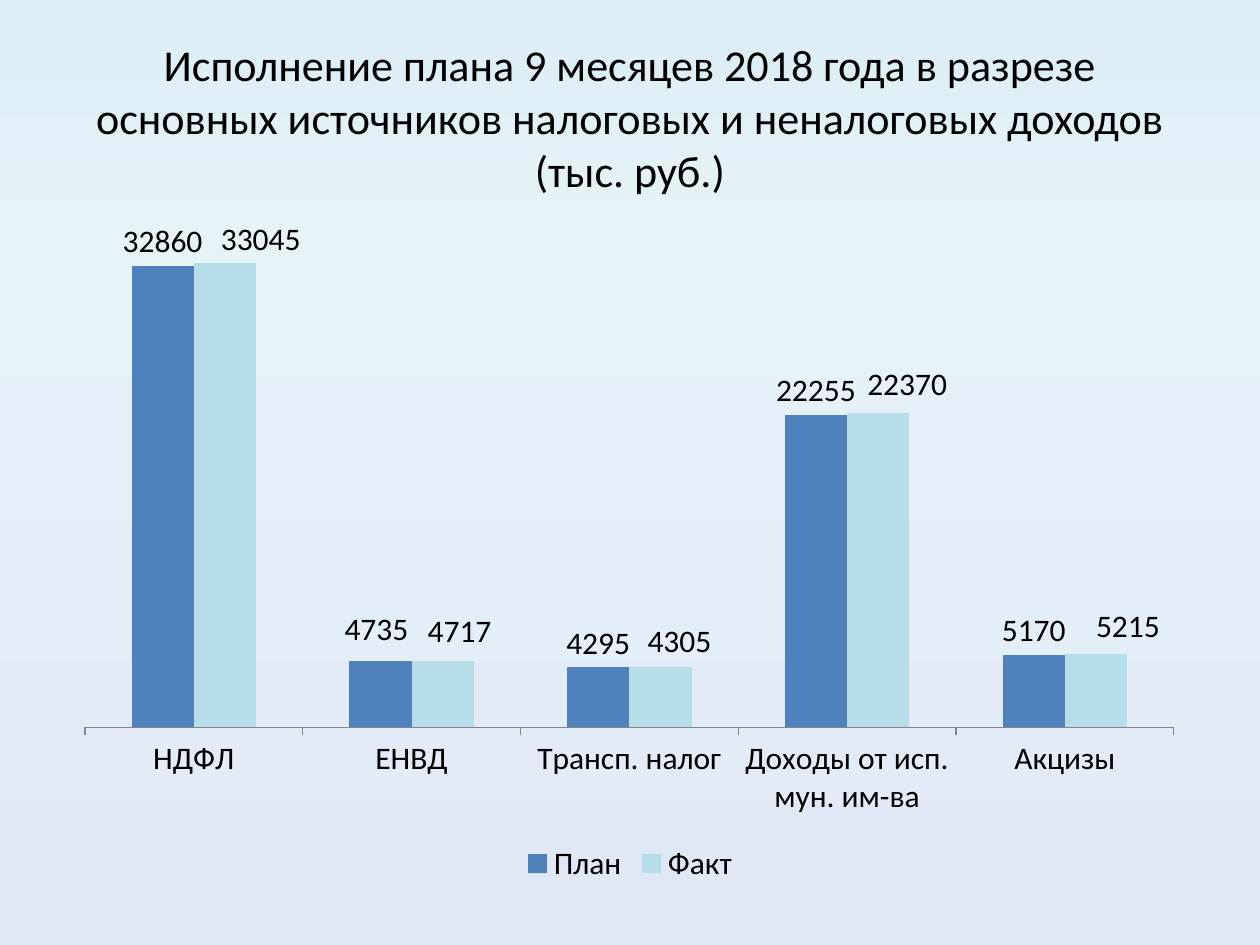
"""Build a slide comparing planned and actual revenue over nine months of 2018."""
import copy
from dataclasses import dataclass, field

import pptx
import pptx.chart.data
import pptx.dml.color
import pptx.enum.chart
import pptx.enum.text
import pptx.oxml
import pptx.oxml.ns
import pptx.util

RGBColor = pptx.dml.color.RGBColor
BLACK = RGBColor(0x00, 0x00, 0x00)
AXIS_GRAY = RGBColor(0x86, 0x86, 0x86)
PLAN_BLUE = RGBColor(0x4F, 0x81, 0xBD)
FACT_BLUE = RGBColor(0xB7, 0xDE, 0xE8)
SKY_TOP = RGBColor(0xDB, 0xEE, 0xF4)
SKY_MIDDLE = RGBColor(0xE6, 0xF3, 0xF7)
SKY_BOTTOM = RGBColor(0xE1, 0xE8, 0xF5)

EMU_PER_PX = 914400 // 126
FONT_NAME = "Calibri"
TITLE = (
    "Исполнение плана 9 месяцев 2018 года в разрезе основных источников "
    "налоговых и неналоговых доходов (тыс. руб.)"
)
CATEGORIES = ["НДФЛ", "ЕНВД", "Трансп. налог", "Доходы от исп. мун. им-ва", "Акцизы"]


@dataclass(frozen=True)
class Box:
    left: int
    top: int
    width: int
    height: int

    def emu(self) -> list:
        return [px(n) for n in (self.left, self.top, self.width, self.height)]


@dataclass(frozen=True)
class RevenueSeries:
    name: str
    values: tuple
    color: RGBColor
    label_shifts: dict = field(default_factory=dict)


TITLE_BOX = Box(63, 38, 1134, 158)
CHART_BOX = Box(63, 220, 1134, 669)
PLOT_BOX = Box(22, 14, 1089, 493)
REVENUE = [
    RevenueSeries("План", (32860, 4735, 4295, 22255, 5170), PLAN_BLUE, {1: (-4, -7)}),
    RevenueSeries(
        "Факт",
        (33045, 4717, 4305, 22370, 5215),
        FACT_BLUE,
        {0: (36, 0), 1: (17, -6), 2: (19, -1), 3: (29, -5), 4: (32, -4)},
    ),
]


def px(length: int) -> pptx.util.Emu:
    return pptx.util.Emu(length * EMU_PER_PX)


def set_values(target, values: dict) -> None:
    for name, value in values.items():
        setattr(target, name, value)


def set_font(font, size: float) -> None:
    set_values(font, {"name": FONT_NAME, "size": pptx.util.Pt(size), "bold": False})
    font.color.rgb = BLACK


def manual_layout(tags: dict):
    items = "".join(f'<c:{tag} val="{value}"/>' for tag, value in tags.items())
    namespace = pptx.oxml.ns.nsdecls("c")
    return pptx.oxml.parse_xml(
        f"<c:layout {namespace}><c:manualLayout>{items}</c:manualLayout></c:layout>"
    )


def paint_background(slide) -> None:
    fill = slide.background.fill
    fill.gradient()
    fill.gradient_angle = 270
    stop_list = next(slide.element.iter(pptx.oxml.ns.qn("a:gsLst")))
    stop_list.insert(1, copy.deepcopy(stop_list[0]))
    stops = ((0, SKY_TOP), (0.25, SKY_MIDDLE), (1, SKY_BOTTOM))
    for stop, (position, color) in zip(fill.gradient_stops, stops):
        stop.position = position
        stop.color.rgb = color


def add_title(slide) -> None:
    frame = slide.shapes.add_textbox(*TITLE_BOX.emu()).text_frame
    set_values(
        frame,
        {"word_wrap": True, "vertical_anchor": pptx.enum.text.MSO_ANCHOR.MIDDLE},
    )
    paragraph = frame.paragraphs[0]
    paragraph.alignment = pptx.enum.text.PP_ALIGN.CENTER
    run = paragraph.add_run()
    run.text = TITLE
    set_font(run.font, 25.2)


def format_series(series, revenue: RevenueSeries) -> None:
    series.format.fill.solid()
    series.format.fill.fore_color.rgb = revenue.color
    series.invert_if_negative = False
    outside_end = pptx.enum.chart.XL_LABEL_POSITION.OUTSIDE_END
    labels = series.data_labels
    set_values(labels, {"show_value": True, "position": outside_end})
    set_font(labels.font, 18)
    for index, (right, down) in revenue.label_shifts.items():
        label = series.points[index].data_label
        set_font(label.font, 18)
        label.position = outside_end
    for element in series.data_labels._element.findall(pptx.oxml.ns.qn("c:dLbl")):
        index = int(element.find(pptx.oxml.ns.qn("c:idx")).get("val"))
        right, down = revenue.label_shifts[index]
        shift = {
            "x": round(right / CHART_BOX.width, 4),
            "y": round(down / CHART_BOX.height, 4),
        }
        element.insert(1, manual_layout(shift))


def place_plot(chart) -> None:
    plot_area = next(chart.element.iter(pptx.oxml.ns.qn("c:plotArea")))
    for old_layout in plot_area.findall(pptx.oxml.ns.qn("c:layout")):
        plot_area.remove(old_layout)
    tags = {
        "layoutTarget": "inner",
        "xMode": "edge",
        "yMode": "edge",
        "x": round(PLOT_BOX.left / CHART_BOX.width, 4),
        "y": round(PLOT_BOX.top / CHART_BOX.height, 4),
        "w": round(PLOT_BOX.width / CHART_BOX.width, 4),
        "h": round(PLOT_BOX.height / CHART_BOX.height, 4),
    }
    plot_area.insert(0, manual_layout(tags))


def add_revenue_chart(slide) -> None:
    data = pptx.chart.data.CategoryChartData()
    data.categories = CATEGORIES
    for revenue in REVENUE:
        data.add_series(revenue.name, revenue.values)
    chart_type = pptx.enum.chart.XL_CHART_TYPE.COLUMN_CLUSTERED
    chart = slide.shapes.add_chart(chart_type, *CHART_BOX.emu(), data).chart
    set_font(chart.font, 18)
    set_values(chart, {"has_title": False, "has_legend": True})
    set_values(
        chart.legend,
        {
            "position": pptx.enum.chart.XL_LEGEND_POSITION.BOTTOM,
            "include_in_layout": False,
        },
    )
    set_values(
        chart.value_axis,
        {
            "visible": False,
            "has_major_gridlines": False,
            "minimum_scale": 0,
            "maximum_scale": 35000,
        },
    )
    chart.category_axis.major_tick_mark = pptx.enum.chart.XL_TICK_MARK.OUTSIDE
    chart.category_axis.format.line.color.rgb = AXIS_GRAY
    plot = chart.plots[0]
    set_values(plot, {"gap_width": 150, "overlap": 0, "vary_by_categories": False})
    for series, revenue in zip(plot.series, REVENUE):
        format_series(series, revenue)
    place_plot(chart)


def main() -> None:
    presentation = pptx.Presentation()
    set_values(
        presentation,
        {"slide_width": pptx.util.Inches(10), "slide_height": pptx.util.Inches(7.5)},
    )
    slide = presentation.slides.add_slide(presentation.slide_layouts[6])
    paint_background(slide)
    add_title(slide)
    add_revenue_chart(slide)
    presentation.save("out.pptx")


if __name__ == "__main__":
    main()
